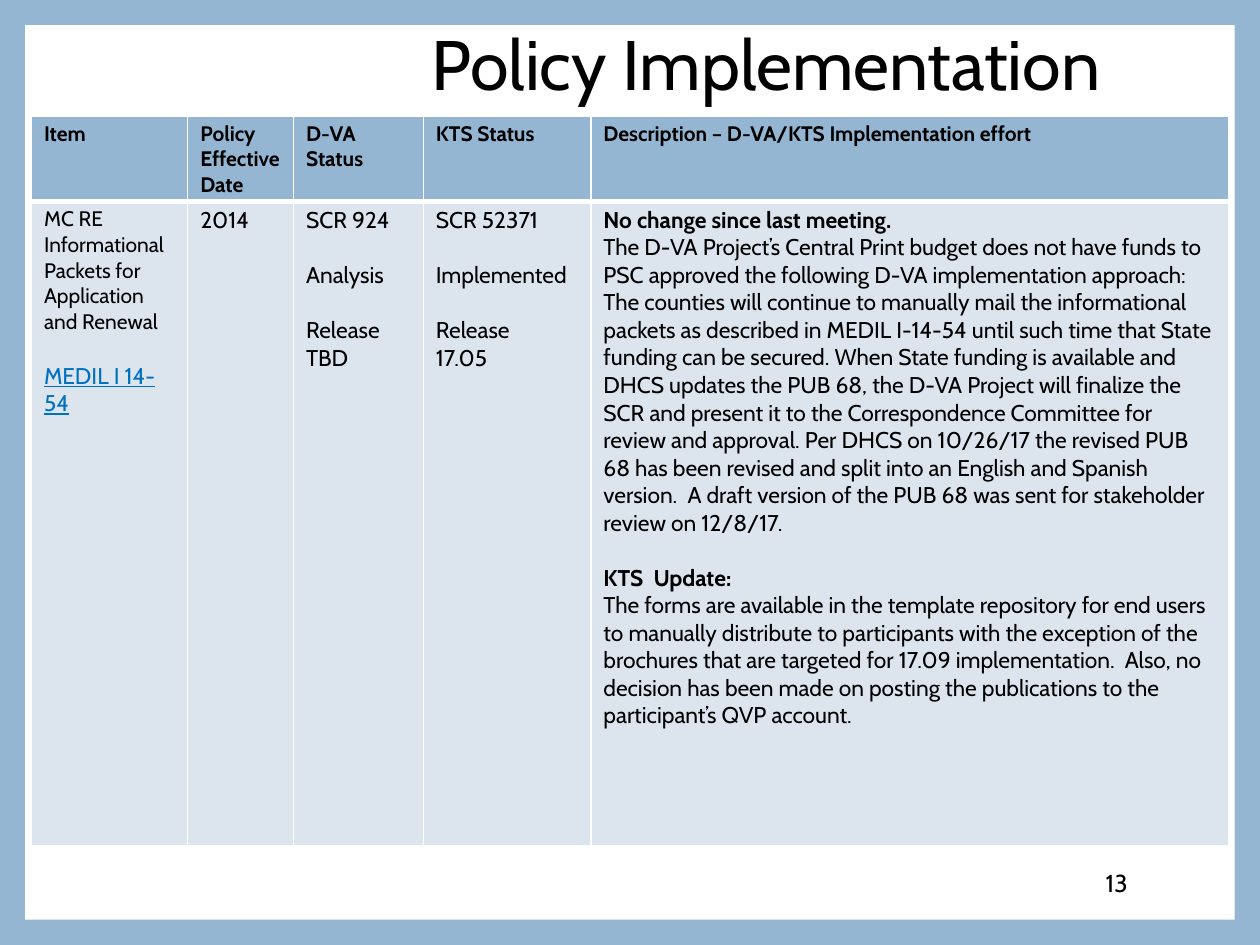
from lxml import etree
from pptx import Presentation, util as u
from pptx.dml.color import RGBColor
from pptx.enum import shapes, text
from pptx.oxml import ns

BLUE, PALE, WHITE, BLACK, LINK = "94B6D2", "DCE5EE", "FFFFFF", "000000", "0070C0"


def color(value):
    return RGBColor.from_string(value)


def write(paragraph, words, size, bold=False, ink=BLACK):
    paragraph.text = words
    for run in paragraph.runs:
        run.font.name = "Cabin"
        run.font.size = u.Pt(size)
        run.font.bold = bold
        run.font.color.rgb = color(ink)


deck = Presentation()
W, H = deck.slide_width, deck.slide_height = u.Inches(10), u.Inches(7.5)
slide = deck.slides.add_slide(deck.slide_layouts[6])
slide.background.fill.solid()
slide.background.fill.fore_color.rgb = color(BLUE)

margin = int(W * 0.02)
page = slide.shapes.add_shape(
    shapes.MSO_SHAPE.RECTANGLE, margin, margin, W - 2 * margin, H - 2 * margin
)
page.shadow.inherit = False
page.fill.solid()
page.fill.fore_color.rgb = color(WHITE)
page.line.fill.background()

for words, size, left, top, width, height in [
    ("Policy Implementation", 40, 0.05, 0.022, 0.833, 0.1),
    ("13", 14, 0.765, 0.908, 0.14, 0.053),
]:
    label = slide.shapes.add_textbox(
        int(W * left), int(H * top), int(W * width), int(H * height)
    )
    label.text_frame.word_wrap = True
    label.text_frame.vertical_anchor = text.MSO_ANCHOR.MIDDLE
    line = label.text_frame.paragraphs[0]
    write(line, words, size)
    line.alignment = text.PP_ALIGN.RIGHT
    if size == 40:
        line.line_spacing = 0.9

headings = [
    "Item",
    "Policy Effective Date",
    "D-VA Status",
    "KTS Status",
    "Description – D-VA/KTS Implementation effort",
]
gap = 15.8
policy = [
    [
        ("MC RE Informational Packets for Application and Renewal", 12, False, 0),
        ("MEDIL I 14-54", 13, False, gap),
    ],
    [("2014", 13, False, 0)],
    [
        ("SCR 924", 13, False, 0),
        ("Analysis", 13, False, gap),
        ("Release", 13, False, gap),
        ("TBD", 13, False, 0),
    ],
    [
        ("SCR 52371", 13, False, 0),
        ("Implemented", 13, False, gap),
        ("Release", 13, False, gap),
        ("17.05", 13, False, 0),
    ],
    [
        ("No change since last meeting.", 13, True, 0),
        ("The D-VA Project’s Central Print budget does not have funds to PSC approved "
         "the following D-VA implementation approach:", 13, False, 0),
        ("The counties will continue to manually mail the informational packets as "
         "described in MEDIL I-14-54 until such time that State funding can be secured. "
         "When State funding is available and DHCS updates the PUB 68, the D-VA Project "
         "will finalize the SCR and present it to the Correspondence Committee for review "
         "and approval. Per DHCS on 10/26/17 the revised PUB 68 has been revised and split "
         "into an English and Spanish version.  A draft version of the PUB 68 was sent for "
         "stakeholder review on 12/8/17.", 13, False, 0),
        ("KTS  Update:", 13, True, gap),
        ("The forms are available in the template repository for end users to manually "
         "distribute to participants with the exception of the brochures that are targeted "
         "for 17.09 implementation.  Also, no decision has been made on posting the "
         "publications to the participant’s QVP account.", 13, False, 0),
    ],
]
rows = [[[(heading, 12, True, 0)] for heading in headings], policy]
column_widths = [1.24, 0.84, 1.03, 1.33, 5.06]
row_heights = [0.68, 5.11]

policies = slide.shapes.add_table(
    len(rows), len(headings), int(W * 0.025), int(H * 0.1225),
    u.Inches(sum(column_widths)), u.Inches(sum(row_heights)),
).table
for column, width in zip(policies.columns, column_widths):
    column.width = u.Inches(width)
for row, height in zip(policies.rows, row_heights):
    row.height = u.Inches(height)

for r, row in enumerate(rows):
    for c, paragraphs in enumerate(row):
        cell = policies.cell(r, c)
        cell.margin_left = cell.margin_right = u.Inches(0.1)
        cell.margin_top = cell.margin_bottom = u.Inches(0.04)
        for i, (words, size, bold, before) in enumerate(paragraphs):
            frame = cell.text_frame
            line = frame.paragraphs[0] if i == 0 else frame.add_paragraph()
            linked = words.startswith("MEDIL")
            write(line, words, size, bold, LINK if linked else BLACK)
            line.runs[0].font.underline = linked
            line.space_before = u.Pt(before)

        properties = cell._tc.get_or_add_tcPr()
        for side in ["L", "R", "T", "B"]:
            thick = (r, side) in [(0, "B"), (1, "T")]
            border = etree.SubElement(
                properties, ns.qn(f"a:ln{side}"), w=str(u.Pt(3 if thick else 1))
            )
            solid = etree.SubElement(border, ns.qn("a:solidFill"))
            etree.SubElement(solid, ns.qn("a:srgbClr"), val=WHITE)
        cell.fill.solid()
        cell.fill.fore_color.rgb = color(PALE if r else BLUE)

deck.save("out.pptx")
